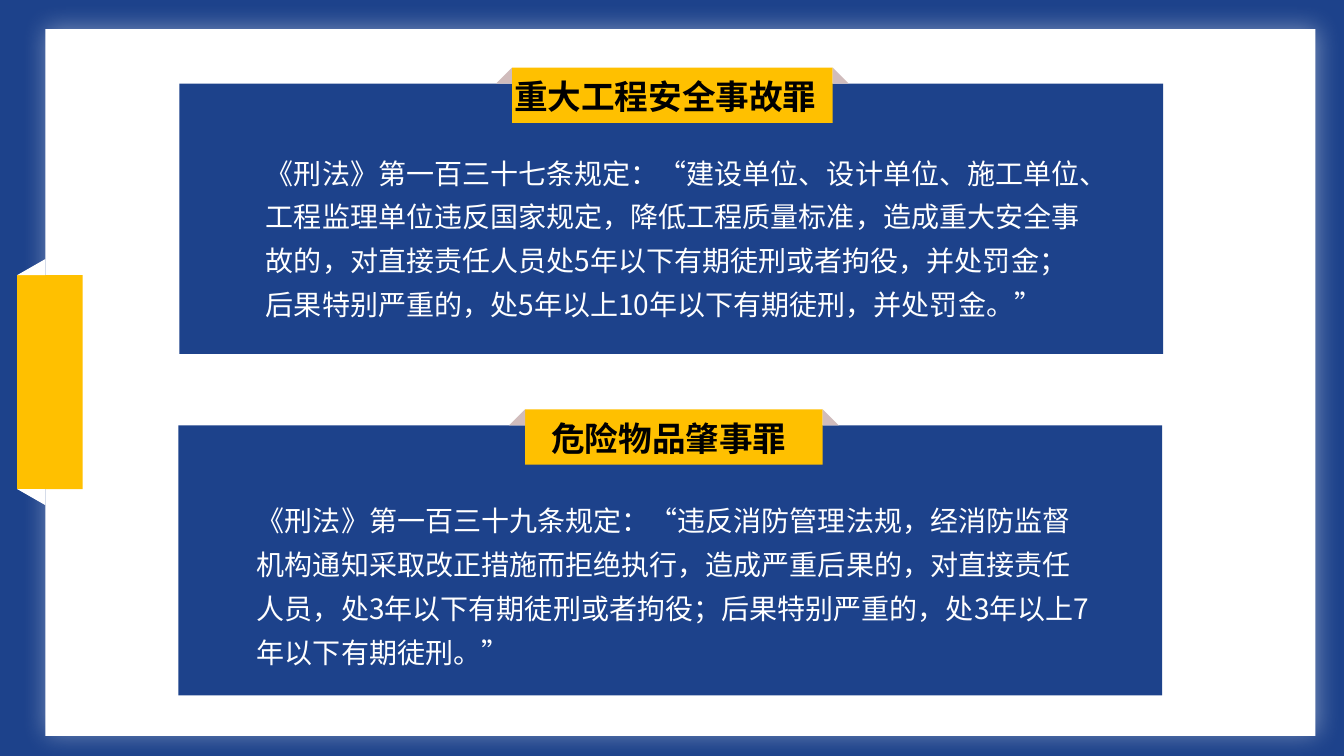
from dataclasses import dataclass
from typing import NamedTuple

from lxml.etree import SubElement
from pptx import Presentation
from pptx.dml.color import RGBColor
from pptx.enum.shapes import MSO_SHAPE as Preset
from pptx.enum.text import MSO_AUTO_SIZE as AutoSize, PP_ALIGN as Align
from pptx.oxml.ns import qn
from pptx.util import Inches, Pt


@dataclass(frozen=True)
class Theme:
    blue: str = "1D428B"
    yellow: str = "FFC000"
    white: str = "FFFFFF"
    black: str = "000000"
    fold: str = "D0BCBC"
    font: str = "Noto Sans CJK SC"
    title_size: int = 24
    body_size: int = 20
    body_spacing: float = 1.3


class Area(NamedTuple):
    """A rectangle in percent of the slide's width and height."""
    left: float
    top: float
    width: float
    height: float


class Span(NamedTuple):
    """A horizontal extent in percent of the slide's width."""
    left: float
    width: float


@dataclass(frozen=True)
class Article:
    title: str
    body: str
    panel_left: float
    panel_top: float
    tab: Span
    title_span: Span
    body_span: Span
    body_top: float


THEME = Theme()
WIDTH, HEIGHT = Inches(13.33), Inches(7.5)
CARD = Area(3.38, 3.87, 94.5, 93.47)
SIDE_TAB = Area(1.28, 36.4, 4.88, 28.3)
PANEL_WIDTH, PANEL_HEIGHT = 73.2, 35.73
TAB_HEIGHT, TITLE_HEIGHT, TITLE_DROP = 7.33, 6.67, 0.47
BODY_HEIGHT = 24.67
FOLD_WIDTH, FOLD_HEIGHT = 1.2, 2.13

ARTICLES = [
    Article(
        "重大工程安全事故罪",
        "《刑法》第一百三十七条规定：“建设单位、设计单位、施工单位、工程监理单位"
        "违反国家规定，降低工程质量标准，造成重大安全事故的，对直接责任人员处5年以下"
        "有期徒刑或者拘役，并处罚金；后果特别严重的，处5年以上10年以下有期徒刑，"
        "并处罚金。”",
        13.35, 11.07, Span(38.1, 23.85), Span(34.35, 30.3), Span(19.05, 62.25), 18.67,
    ),
    Article(
        "危险物品肇事罪",
        "《刑法》第一百三十九条规定：“违反消防管理法规，经消防监督机构通知采取改正"
        "措施而拒绝执行，造成严重后果的，对直接责任人员，处3年以下有期徒刑或者拘役；"
        "后果特别严重的，处3年以上7年以下有期徒刑。”",
        13.28, 56.27, Span(39.08, 22.13), Span(37.5, 24.53), Span(18.38, 63.53), 64.67,
    ),
]


def place(area: Area) -> tuple[int, int, int, int]:
    """Turn percentages into slide units."""
    return (int(WIDTH * area.left / 100), int(HEIGHT * area.top / 100),
            int(WIDTH * area.width / 100), int(HEIGHT * area.height / 100))


def add_block(page, area: Area, color: str, preset=Preset.RECTANGLE, flips: str = ""):
    """Add a borderless shape; flips holds "H" and/or "V"."""
    block = page.shapes.add_shape(preset, *place(area))
    block.shadow.inherit = False
    block.fill.solid()
    block.fill.fore_color.rgb = RGBColor.from_string(color)
    block.line.fill.background()
    for axis in flips:
        block._element.spPr.xfrm.set(f"flip{axis}", "1")
    return block


def add_glow_shadow(block, color: str) -> None:
    effects = block._element.spPr.find(qn("a:effectLst"))
    shadow = SubElement(effects, qn("a:outerShdw"), blurRad=str(Pt(18)),
                        dist=str(Pt(1)), dir="0", algn="ctr", rotWithShape="0")
    tint = SubElement(shadow, qn("a:srgbClr"), val=color)
    SubElement(tint, qn("a:alpha"), val="40000")


def add_text(page, area: Area, text: str, size: int, color: str, bold: bool = False,
             align=Align.LEFT, spacing: float = 1.0) -> None:
    frame = page.shapes.add_textbox(*place(area)).text_frame
    frame.word_wrap = True
    frame.auto_size = AutoSize.SHAPE_TO_FIT_TEXT
    para = frame.paragraphs[0]
    para.text = text
    para.alignment = align
    para.line_spacing = spacing
    font = para.font
    font.size, font.bold, font.name = Pt(size), bold, THEME.font
    font.color.rgb = RGBColor.from_string(color)
    SubElement(para._p.pPr.find(qn("a:defRPr")), qn("a:ea"), typeface=THEME.font)


def draw_frame(page) -> None:
    """Draw the white card and the yellow tab folded round its left edge."""
    add_glow_shadow(add_block(page, CARD, THEME.white), THEME.white)
    add_block(page, SIDE_TAB, THEME.yellow)
    fold_width = CARD.left - SIDE_TAB.left
    for top, flips in ((SIDE_TAB.top - FOLD_HEIGHT, "H"),
                       (SIDE_TAB.top + SIDE_TAB.height, "HV")):
        add_block(page, Area(SIDE_TAB.left, top, fold_width, FOLD_HEIGHT),
                  THEME.white, Preset.RIGHT_TRIANGLE, flips)


def draw_article(page, article: Article) -> None:
    tab, tab_top = article.tab, article.panel_top - FOLD_HEIGHT
    add_block(page, Area(article.panel_left, article.panel_top, PANEL_WIDTH, PANEL_HEIGHT),
              THEME.blue)
    add_block(page, Area(tab.left, tab_top, tab.width, TAB_HEIGHT), THEME.yellow)
    for left, flips in ((tab.left + tab.width, ""), (tab.left - FOLD_WIDTH, "H")):
        add_block(page, Area(left, tab_top, FOLD_WIDTH, FOLD_HEIGHT),
                  THEME.fold, Preset.RIGHT_TRIANGLE, flips)
    title, body = article.title_span, article.body_span
    add_text(page, Area(title.left, tab_top + TITLE_DROP, title.width, TITLE_HEIGHT),
             article.title, THEME.title_size, THEME.black, bold=True, align=Align.CENTER)
    add_text(page, Area(body.left, article.body_top, body.width, BODY_HEIGHT),
             article.body, THEME.body_size, THEME.white, spacing=THEME.body_spacing)


def main() -> None:
    deck = Presentation()
    deck.slide_width, deck.slide_height = WIDTH, HEIGHT
    page = deck.slides.add_slide(deck.slide_layouts[6])
    page.background.fill.solid()
    page.background.fill.fore_color.rgb = RGBColor.from_string(THEME.blue)
    draw_frame(page)
    for article in ARTICLES:
        draw_article(page, article)
    deck.save("out.pptx")


if __name__ == "__main__":
    main()
